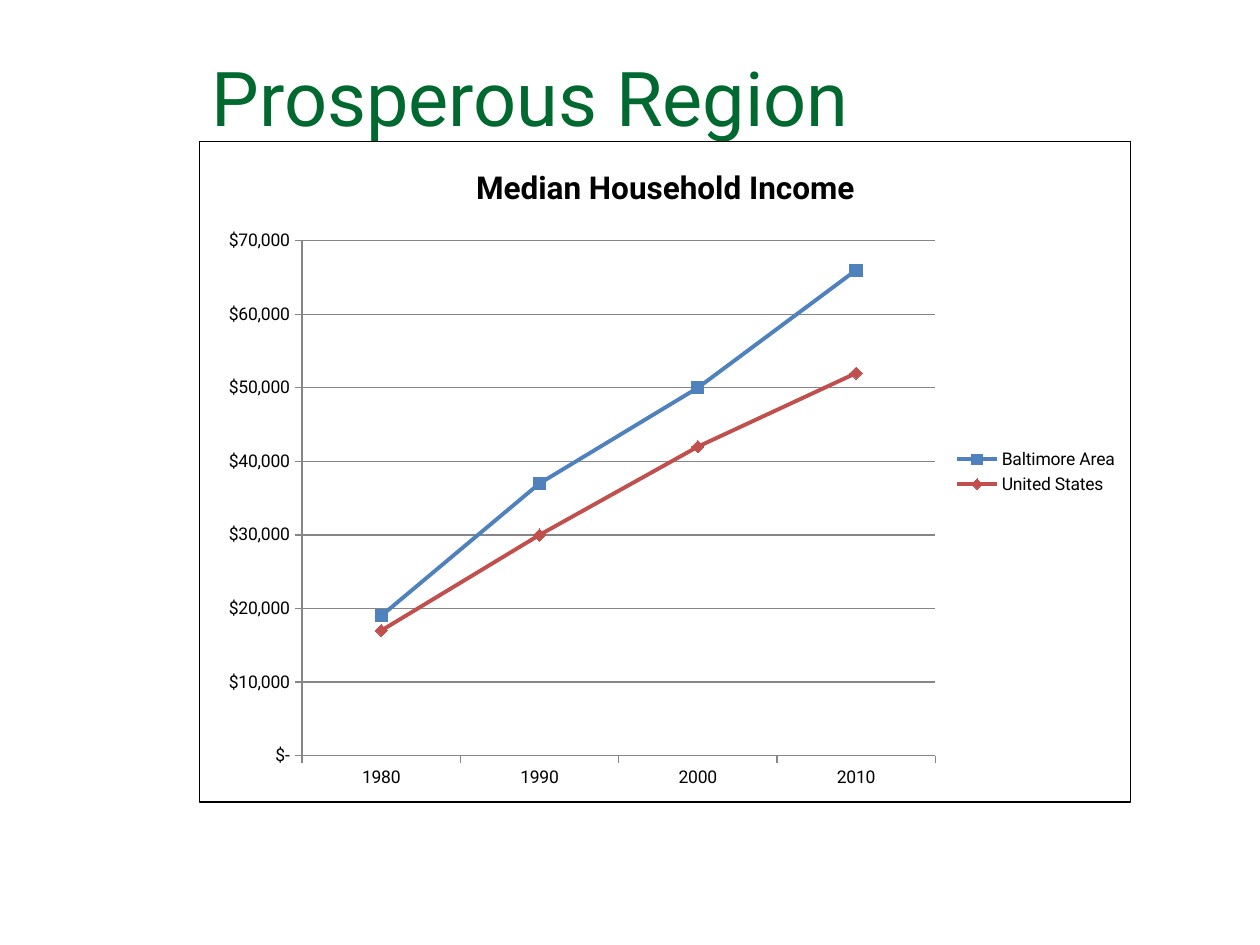
"""Build a slide with a line chart of median household income."""
from lxml import etree
from pptx import Presentation
from pptx.chart.data import CategoryChartData
from pptx.dml.color import RGBColor
from pptx.enum.chart import XL_CHART_TYPE, XL_LEGEND_POSITION, XL_MARKER_STYLE, XL_TICK_MARK
from pptx.enum.text import MSO_ANCHOR, PP_ALIGN
from pptx.oxml import parse_xml
from pptx.oxml.ns import nsdecls, qn
from pptx.util import Inches, Pt

LINE_MARKERS = XL_CHART_TYPE.LINE_MARKERS
LEGEND_RIGHT = XL_LEGEND_POSITION.RIGHT
SQUARE, DIAMOND = XL_MARKER_STYLE.SQUARE, XL_MARKER_STYLE.DIAMOND
TICK_OUTSIDE = XL_TICK_MARK.OUTSIDE
BOTTOM, LEFT = MSO_ANCHOR.BOTTOM, PP_ALIGN.LEFT

FONT = "Roboto"
COLORS = {
    "title": "00692F", "text": "000000", "grid": "868686", "background": "FFFFFF",
    "baltimore": "4F81BD", "states": "C0504D",
}
YEARS = ["1980", "1990", "2000", "2010"]
INCOMES = [
    ("Baltimore Area", [19000, 37000, 50000, 66000], "baltimore", SQUARE),
    ("United States", [17000, 30000, 42000, 52000], "states", DIAMOND),
]
PLOT_LAYOUT = {"x": 0.11, "y": 0.15, "w": 0.68, "h": 0.78}


def color(name):
    return RGBColor.from_string(COLORS[name])


def format_font(font, size, color_name, bold=False):
    font.name = FONT
    font.size = Pt(size)
    font.bold = bold
    font.color.rgb = color(color_name)


presentation = Presentation()
presentation.slide_width, presentation.slide_height = Inches(10), Inches(7.5)
slide = presentation.slides.add_slide(presentation.slide_layouts[5])

title = slide.shapes.title
title.left, title.top = Inches(1.58), Inches(0.46)
title.width, title.height = Inches(7.33), Inches(0.66)
title_frame = title.text_frame
title_frame.word_wrap = True
title_frame.vertical_anchor = BOTTOM
title_frame.margin_bottom = 0
paragraph = title_frame.paragraphs[0]
paragraph.alignment = LEFT
paragraph.line_spacing = 0.8
run = paragraph.add_run()
run.text = "Prosperous Region"
format_font(run.font, 43.2, "title")

chart_data = CategoryChartData()
chart_data.categories = YEARS
for name, values, color_name, marker_style in INCOMES:
    chart_data.add_series(name, values)
chart = slide.shapes.add_chart(
    LINE_MARKERS, Inches(1.58), Inches(1.12), Inches(7.4), Inches(5.25), chart_data
).chart
format_font(chart.font, 10, "text")

chart.has_title = True
run = chart.chart_title.text_frame.paragraphs[0].add_run()
run.text = "Median Household Income"
format_font(run.font, 18, "text", bold=True)
chart.chart_title.include_in_layout = False

chart.has_legend = True
chart.legend.position = LEGEND_RIGHT
chart.legend.include_in_layout = False
format_font(chart.legend.font, 10, "text")

value_axis = chart.value_axis
value_axis.minimum_scale, value_axis.maximum_scale = 0, 70000
value_axis.major_unit = 10000
value_axis.has_major_gridlines = True
value_axis.tick_labels.number_format = '"$"#,##0;"$"(#,##0);"$-"'
value_axis.tick_labels.number_format_is_linked = False
axis_lines = [value_axis.major_gridlines.format.line]
for axis in (chart.category_axis, value_axis):
    axis.major_tick_mark = TICK_OUTSIDE
    format_font(axis.tick_labels.font, 10, "text")
    axis_lines.append(axis.format.line)
for line in axis_lines:
    line.color.rgb = color("grid")
    line.width = Pt(0.75)

plot = chart.plots[0]
plot.vary_by_categories = False
for series, (name, values, color_name, marker_style) in zip(plot.series, INCOMES):
    series.smooth = False
    series.format.line.color.rgb = color(color_name)
    series.format.line.width = Pt(2.25)
    series.marker.style = marker_style
    series.marker.size = 7
    for part in (series.marker.format.fill, series.marker.format.line.fill):
        part.solid()
        part.fore_color.rgb = color(color_name)

chart_space = chart.element
plot_area = chart_space.find(qn("c:chart")).find(qn("c:plotArea"))
for old_layout in plot_area.findall(qn("c:layout")):
    plot_area.remove(old_layout)
layout = parse_xml(f"<c:layout {nsdecls('c')}><c:manualLayout/></c:layout>")
settings = {"layoutTarget": "inner", "xMode": "edge", "yMode": "edge", **PLOT_LAYOUT}
for tag, value in settings.items():
    etree.SubElement(layout[0], qn(f"c:{tag}")).set("val", str(value))
plot_area.insert(0, layout)

chart_space.find(qn("c:chart")).addnext(parse_xml(
    f"<c:spPr {nsdecls('c', 'a')}>"
    f'<a:solidFill><a:srgbClr val="{COLORS["background"]}"/></a:solidFill>'
    f'<a:ln w="{Pt(0.75)}"><a:solidFill><a:srgbClr val="{COLORS["text"]}"/></a:solidFill></a:ln>'
    "</c:spPr>"
))

presentation.save("out.pptx")
